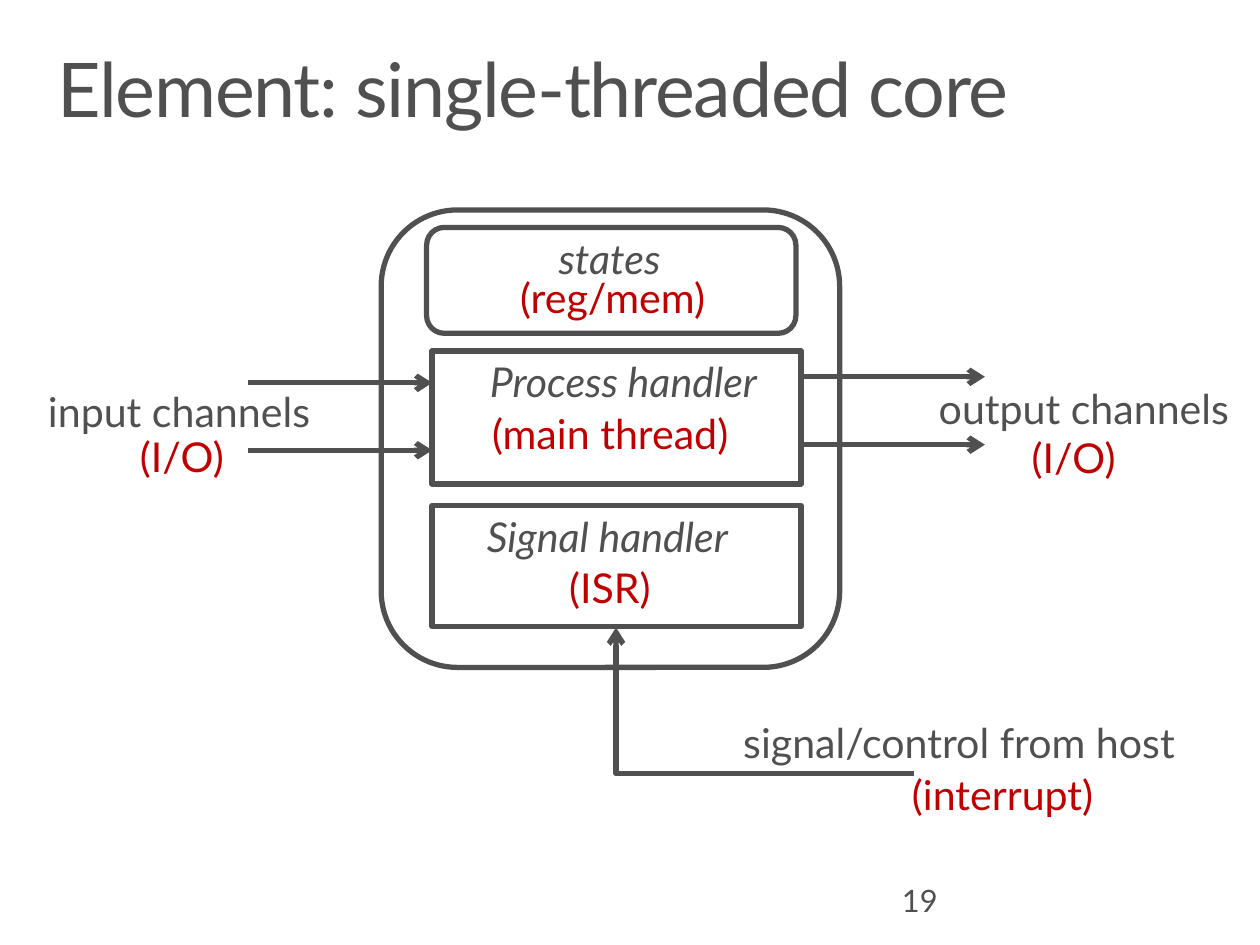
from lxml.etree import SubElement
from pptx import Presentation
from pptx.dml.color import RGBColor
from pptx.enum.shapes import MSO_CONNECTOR, MSO_SHAPE
from pptx.enum.text import MSO_AUTO_SIZE
from pptx.oxml.ns import qn
from pptx.util import Pt

GREY, RED, WHITE = "505050", "C00000", "FFFFFF"


def rgb(value):
    """Turn a hex string into a colour."""
    return RGBColor.from_string(value)


def add_text(s, box, text, size, color=GREY, italic=False, insets=(7.2, 3.6)):
    """Add a one-run text box and return it."""
    sp = s.shapes.add_textbox(*map(Pt, box))
    tf = sp.text_frame
    tf.word_wrap = True
    tf.margin_left = tf.margin_right = Pt(insets[0])
    tf.margin_top = tf.margin_bottom = Pt(insets[1])
    r = tf.paragraphs[0].add_run()
    r.text = text
    r.font.name, r.font.size = "Lato", Pt(size)
    r.font.italic = italic
    r.font.color.rgb = rgb(color)
    return sp


def add_label(s, x, y, w, text, color=GREY, italic=False):
    """Add a diagram label that grows with its text."""
    sp = add_text(s, (x, y, w, 48), text, 23.5, color, italic, (14.4, 11.5))
    tf = sp.text_frame
    tf.auto_size = MSO_AUTO_SIZE.SHAPE_TO_FIT_TEXT
    p = tf.paragraphs[0]
    p.line_spacing, p.space_after = 0.9, Pt(5.9)


def add_box(s, kind, box):
    """Add a white outlined box."""
    sp = s.shapes.add_shape(kind, *map(Pt, box))
    sp.shadow.inherit = False
    sp.fill.solid()
    sp.fill.fore_color.rgb = rgb(WHITE)
    sp.line.color.rgb = rgb(GREY)
    sp.line.width = Pt(3)


def add_arrow(s, x1, y1, x2, y2, kind=MSO_CONNECTOR.STRAIGHT):
    """Add a connector with an open arrowhead at its end."""
    c = s.shapes.add_connector(kind, *map(Pt, (x1, y1, x2, y2)))
    c.line.color.rgb = rgb(GREY)
    c.line.width = Pt(3)
    SubElement(c.line._get_or_add_ln(), qn("a:tailEnd"), type="arrow")
    SubElement(c._element.spPr, qn("a:effectLst"))
    return c


def add_title(s, box, text):
    """Place the slide title."""
    sp = add_text(s, box, text, 43.1, insets=(11.5, 7.2))
    p = sp.text_frame.paragraphs[0]
    p.line_spacing = 0.9
    p.runs[0].font._element.set("spc", "-70")


def add_part(s, kind, box, name, note):
    """Place a core part with its name and its red note."""
    x, y, _, _ = box
    add_box(s, kind, box)
    for (dx, dy, w, text), color in ((name, GREY), (note, RED)):
        add_label(s, x + dx, y + dy, w, text, color, color == GREY)


def add_core(s, box):
    """Place the core outline and the three parts inside it."""
    x, y, _, _ = box
    rounded, square = MSO_SHAPE.ROUNDED_RECTANGLE, MSO_SHAPE.RECTANGLE
    add_box(s, rounded, box)
    parts = [
        (rounded, 26, 10, 60.5, (61, -5, 100, "states"), (39, 17.2, 150, "(reg/mem)")),
        (square, 29, 80.6, 76, (18.7, -5.4, 200, "Process handler"), (20, 24.6, 180, "(main thread)")),
        (square, 29, 169, 69, (17, -5.2, 197, "Signal handler"), (64, 23.8, 90, "(ISR)")),
    ]
    for kind, dx, dy, h, name, note in parts:
        add_part(s, kind, (x + dx, y + dy, 211, h), name, note)


def add_channels(s, box, name, note):
    """Place a pair of channel arrows with their labels."""
    x, y, w, h = box
    for line_y in (y, y + h):
        add_arrow(s, x, line_y, x + w, line_y)
    for (dx, dy, label_w, text), color in ((name, GREY), (note, RED)):
        add_label(s, x + dx, y + dy, label_w, text, color)


def add_signal(s, box):
    """Place the bent host signal arrow, which runs left and then up."""
    x, y, w, h = box
    c = add_arrow(s, x, y, x + w, y + h, MSO_CONNECTOR.ELBOW)
    c._element.spPr.find(qn("a:prstGeom")).set("prst", "bentConnector2")
    c._element.spPr.find(qn("a:xfrm")).set("rot", "10800000")
    add_label(s, x + 58.3, y + 43.2, 290, "signal/control from host")
    add_label(s, x + 154.7, y + 72.7, 145, "(interrupt)", RED)


def main():
    """Build the slide."""
    prs = Presentation()
    prs.slide_width, prs.slide_height = Pt(720), Pt(540)
    s = prs.slides.add_slide(prs.slide_layouts[6])
    add_title(s, (21.2, 23, 677.5, 70.5), "Element: single-threaded core")
    add_core(s, (217.8, 120, 262, 261.4))
    add_channels(s, (142, 218.8, 105, 38.5),
                 (-129, -6.4, 190, "input channels"), (-76.5, 19.3, 90, "(I/O)"))
    add_channels(s, (457.3, 215.3, 105.5, 38.8),
                 (64.7, -4.3, 198, "output channels"), (117.8, 23.7, 90, "(I/O)"))
    add_signal(s, (352, 358.6, 170, 83.5))
    add_text(s, (508.3, 500.4, 162, 28.8), "19", 17.6)
    prs.save("out.pptx")


if __name__ == "__main__":
    main()
